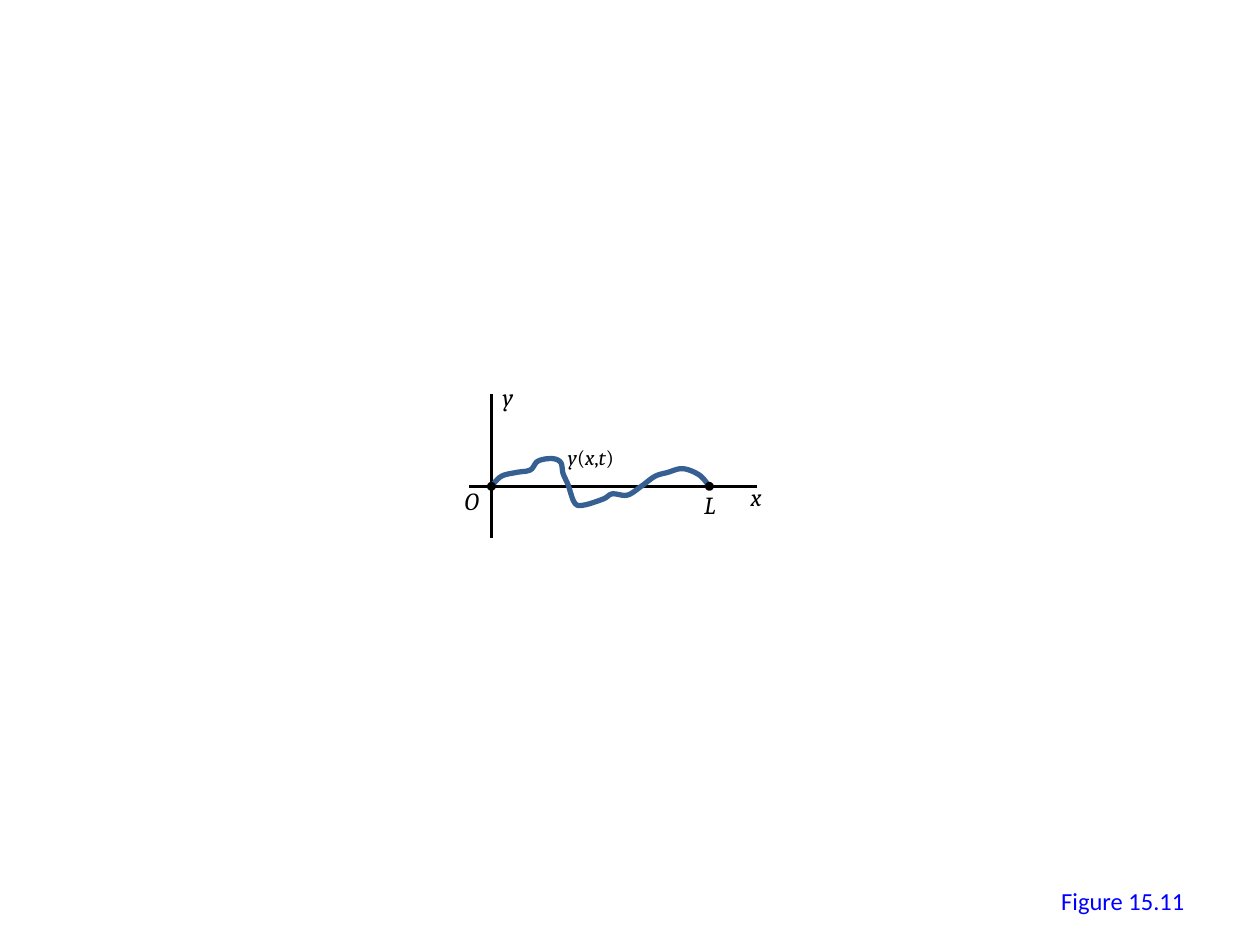
from pptx import Presentation
from pptx.dml.color import RGBColor
from pptx.enum import shapes, text
from pptx.oxml.ns import qn
from pptx.util import Inches, Pt

BLACK = RGBColor(0x00, 0x00, 0x00)
BLUE = RGBColor(0x00, 0x00, 0xFF)
STRING_BLUE = RGBColor(0x37, 0x60, 0x92)

AXIS_WIDTH = Pt(1.5)
STRING_WIDTH = Pt(3)
STRING_LENGTH = 1.73
STEPS_PER_SPAN = 6

# Crests, troughs and bends of the string: inches right of and above O
STRING_KNOTS = [
    (0, 0), (0.08, 0.08), (0.2, 0.11), (0.31, 0.13), (0.37, 0.2),
    (0.48, 0.22), (0.55, 0.19), (0.57, 0.1), (0.61, 0.01), (0.66, -0.13),
    (0.73, -0.15), (0.89, -0.1), (0.96, -0.06), (1.08, -0.07), (1.19, 0),
    (1.3, 0.08), (1.4, 0.11), (1.52, 0.14), (1.65, 0.09), (STRING_LENGTH, 0)]


def spline(a, b, c, d, t):
    """Catmull-Rom value at t (0 to 1) on the way from b to c."""
    return b + t / 2 * (c - a + t * (2 * a - 5 * b + 4 * c - d
                                     + t * (3 * (b - c) + d - a)))


def smooth_curve(knots):
    """Return the points of a smooth curve through the knots."""
    padded = [knots[0], *knots, knots[-1]]
    points = [knots[0]]
    for span in zip(padded, padded[1:], padded[2:], padded[3:]):
        xs, ys = zip(*span)
        for step in range(1, STEPS_PER_SPAN + 1):
            t = step / STEPS_PER_SPAN
            points.append((spline(*xs, t), spline(*ys, t)))
    return points


def add_label(slide, x, y, w, h, words, size=14, font="Cambria", color=BLACK):
    """Add one line of text and return its box."""
    sp = slide.shapes.add_textbox(Inches(x), Inches(y), Inches(w), Inches(h))
    sp.text_frame.word_wrap = False
    p = sp.text_frame.paragraphs[0]
    p.font.size, p.font.name, p.font.color.rgb = Pt(size), font, color
    p.add_run().text = words
    return sp


def add_math_label(slide, x, y, w, h, formula, size=14):
    """Add a formula with italic letters and upright punctuation."""
    p = add_label(slide, x, y, w, h, "", size).text_frame.paragraphs[0]
    p.runs[0].text = formula[0]
    for symbol in formula[1:]:
        p.add_run().text = symbol
    for r in p.runs:
        r.font.italic = r.text.isalpha()


def add_axis(slide, x1, y1, x2, y2):
    axis = slide.shapes.add_connector(
        shapes.MSO_CONNECTOR.STRAIGHT,
        Inches(x1), Inches(y1), Inches(x2), Inches(y2))
    axis.line.color.rgb, axis.line.width = BLACK, AXIS_WIDTH
    pr = axis._element.spPr
    pr.append(pr.makeelement(qn("a:effectLst"), {}))


def add_string(slide, x, y):
    """Draw the displaced string, starting at (x, y)."""
    points = [(Inches(x + dx), Inches(y - rise))
              for dx, rise in smooth_curve(STRING_KNOTS)]
    builder = slide.shapes.build_freeform(*points[0])
    builder.add_line_segments(points[1:], close=False)
    sp = builder.convert_to_shape()
    sp.fill.background()
    sp.line.color.rgb, sp.line.width = STRING_BLUE, STRING_WIDTH
    sp.shadow.inherit = False


def add_fixed_end(slide, x, y, size=0.05):
    """Draw a dot centred on (x, y)."""
    sp = slide.shapes.add_shape(
        shapes.MSO_SHAPE.OVAL, Inches(x - size / 2), Inches(y - size / 2),
        Inches(size), Inches(size))
    sp.fill.solid()
    sp.fill.fore_color.rgb = BLACK
    sp.line.color.rgb, sp.line.width = BLACK, AXIS_WIDTH
    sp.shadow.inherit = False


def add_string_graph(slide, left, top, width, height):
    """Draw the string and its axes so that the axes fill the box."""
    x, y = left + 0.18, top + 0.73  # origin O

    # Axes
    add_axis(slide, left + width, y, left, y)
    add_axis(slide, x, top, x, top + height)

    # Labels: formula, offset from O, box size, font size
    for formula, dx, dy, w, h, size in [
            ("O", -0.31, -0.05, 0.4, 0.34, 14),
            ("x", 1.96, -0.08, 0.34, 0.34, 14),
            ("y(x,t)", 0.51, -0.38, 0.6, 0.3, 12),
            ("L", 1.59, -0.02, 0.36, 0.34, 14),
            ("y", -0.01, -0.88, 0.34, 0.34, 14)]:
        add_math_label(slide, x + dx, y + dy, w, h, formula, size)

    # String and its fixed ends
    add_string(slide, x, y)
    for end in (x, x + STRING_LENGTH):
        add_fixed_end(slide, end, y)


def add_figure_number(slide, left, top, width, height):
    """Write the figure number against the right side of the box."""
    sp = add_label(slide, left, top, width, height, "Figure 15.11",
                   font="Calibri", color=BLUE)
    tf = sp.text_frame
    tf.word_wrap = True
    tf.vertical_anchor = text.MSO_ANCHOR.MIDDLE
    tf.paragraphs[0].alignment = text.PP_ALIGN.RIGHT


def main():
    prs = Presentation()
    prs.slide_width, prs.slide_height = Inches(10), Inches(7.5)
    slide = prs.slides.add_slide(prs.slide_layouts[6])  # blank
    add_string_graph(slide, 3.72, 3.13, 2.29, 1.14)
    add_figure_number(slide, 7.17, 6.95, 2.33, 0.4)
    prs.save("out.pptx")


if __name__ == "__main__":
    main()
